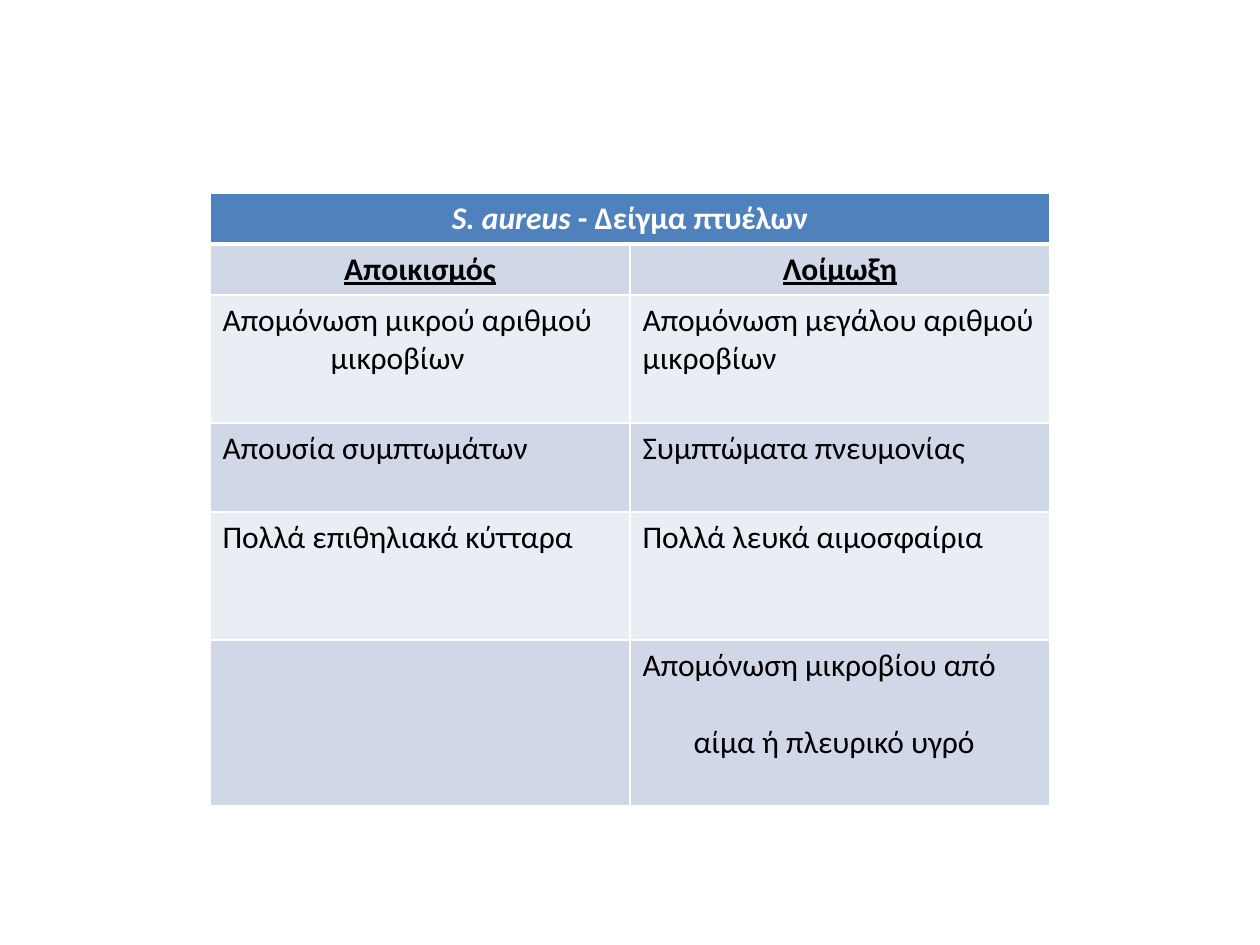
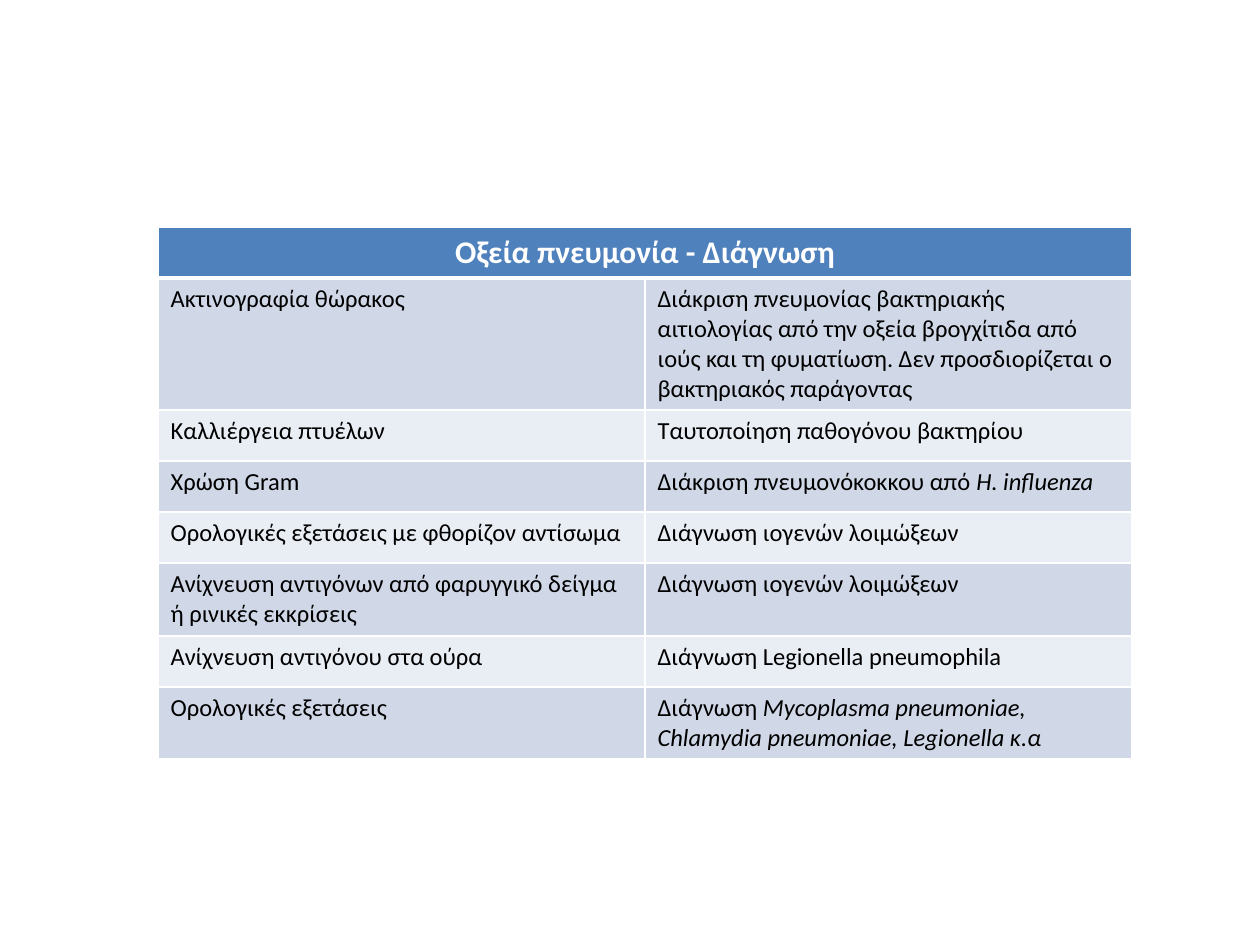
from dataclasses import dataclass
from itertools import accumulate

from lxml.etree import SubElement
from pptx import Presentation
from pptx.dml.color import RGBColor as Color
from pptx.enum.text import PP_ALIGN as Align
from pptx.oxml.ns import qn
from pptx.util import Pt

PX = 914400 / 126


def px(length):
    return round(length * PX)


@dataclass(frozen=True)
class Theme:
    font: str = "Calibri"
    header_fill: str = "4F81BD"
    bands: tuple = ("D0D8E8", "E9EDF4")
    light: str = "FFFFFF"
    dark: str = "000000"
    large: int = 18
    small: int = 14
    thin: int = 1
    thick: int = 3


@dataclass(frozen=True)
class Line:
    text: str
    indent: int = 0
    gap: int = 0


@dataclass(frozen=True)
class Style:
    size: int
    color: str
    bold: bool = False
    underline: bool = False
    align: Align = Align.LEFT


THEME = Theme()
HEADER = Style(THEME.large, THEME.light, bold=True, align=Align.CENTER)
SUBHEADER = Style(THEME.large, THEME.dark, bold=True, underline=True, align=Align.CENTER)
LARGE_BODY = Style(THEME.large, THEME.dark)
SMALL_BODY = Style(THEME.small, THEME.dark)

SPUTUM_TITLE = "*S. aureus* - Δείγμα πτυέλων"
SPUTUM_ROWS = [
    (51, "Αποικισμός", "Λοίμωξη"),
    (128, [Line("Απομόνωση μικρού αριθμού"), Line("μικροβίων", indent=108)],
     "Απομόνωση μεγάλου αριθμού μικροβίων"),
    (89, "Απουσία συμπτωμάτων", "Συμπτώματα πνευμονίας"),
    (128, "Πολλά επιθηλιακά κύτταρα", "Πολλά λευκά αιμοσφαίρια"),
    (166, "", [Line("Απομόνωση μικροβίου από"),
               Line("αίμα ή πλευρικό υγρό", indent=51, gap=22)]),
]

DIAGNOSIS_TITLE = "Οξεία πνευμονία - Διάγνωση"
DIAGNOSIS_ROWS = [
    (131, "Ακτινογραφία θώρακος",
     "Διάκριση πνευμονίας βακτηριακής αιτιολογίας από την οξεία βρογχίτιδα από "
     "ιούς και τη φυματίωση. Δεν προσδιορίζεται ο βακτηριακός παράγοντας"),
    (51, "Καλλιέργεια πτυέλων", "Ταυτοποίηση παθογόνου βακτηρίου"),
    (51, "Χρώση Gram", "Διάκριση πνευμονόκοκκου από *H. influenza*"),
    (51, "Ορολογικές εξετάσεις με φθορίζον αντίσωμα", "Διάγνωση ιογενών λοιμώξεων"),
    (73, "Ανίχνευση αντιγόνων από φαρυγγικό δείγμα ή ρινικές εκκρίσεις",
     "Διάγνωση ιογενών λοιμώξεων"),
    (51, "Ανίχνευση αντιγόνου στα ούρα", "Διάγνωση Legionella pneumophila"),
    (72, "Ορολογικές εξετάσεις",
     "Διάγνωση *Mycoplasma pneumoniae, Chlamydia pneumoniae, Legionella κ.α*"),
]


def write_line(para, line, style):
    para.alignment = style.align
    if line.indent:
        para._p.get_or_add_pPr().set("marL", str(px(line.indent)))
    if line.gap:
        para.space_before = Pt(line.gap)
    font = para.font
    font.name, font.size = THEME.font, Pt(style.size)
    font.bold, font.underline = style.bold, style.underline
    font.color.rgb = Color.from_string(style.color)
    for position, text in enumerate(line.text.split("*")):
        if text:
            span = para.add_run()
            span.text = text
            if position % 2:
                span.font.italic = True


def write_cell(cell, content, style):
    lines = [Line(content)] if isinstance(content, str) else content
    frame = cell.text_frame
    for position, line in enumerate(lines):
        para = frame.add_paragraph() if position else frame.paragraphs[0]
        write_line(para, line, style)


def paint_cell(cell, fill, top, bottom):
    properties = cell._tc.get_or_add_tcPr()
    sides = {"L": THEME.thin, "R": THEME.thin, "T": top, "B": bottom}
    for side, width in sides.items():
        border = SubElement(properties, qn(f"a:ln{side}"), w=str(Pt(width)))
        paint = SubElement(border, qn("a:solidFill"))
        SubElement(paint, qn("a:srgbClr"), val=THEME.light)
    cell.fill.solid()
    cell.fill.fore_color.rgb = Color.from_string(fill)


def add_comparison(page, box, title, rows, body, first=None):
    left, top, width = box
    heights = [51] + [row[0] for row in rows]
    edges = list(accumulate(heights))
    table = page.shapes.add_table(
        len(heights), 2, px(left), px(top), px(width), px(edges[-1])).table
    for column in table.columns:
        column.width = px(width / 2)
    for row, height in zip(table.rows, heights):
        row.height = px(height)

    for index, row in enumerate(table.rows):
        fill = THEME.bands[(index - 1) % 2] if index else THEME.header_fill
        upper = THEME.thick if index == 1 else THEME.thin
        lower = THEME.thin if index else THEME.thick
        for cell in row.cells:
            paint_cell(cell, fill, upper, lower)

    table.cell(0, 0).merge(table.cell(0, 1))
    write_cell(table.cell(0, 0), title, HEADER)
    for index, (_, *contents) in enumerate(rows, start=1):
        style = first if first and index == 1 else body
        for column, content in enumerate(contents):
            write_cell(table.cell(index, column), content, style)


def main():
    deck = Presentation()
    deck.slide_width, deck.slide_height = px(1260), px(945)
    blank = deck.slide_layouts[6]
    add_comparison(deck.slides.add_slide(blank), (210, 193, 840),
                   SPUTUM_TITLE, SPUTUM_ROWS, LARGE_BODY, SUBHEADER)
    add_comparison(deck.slides.add_slide(blank), (158, 227, 974),
                   DIAGNOSIS_TITLE, DIAGNOSIS_ROWS, SMALL_BODY)
    deck.save("out.pptx")


if __name__ == "__main__":
    main()
